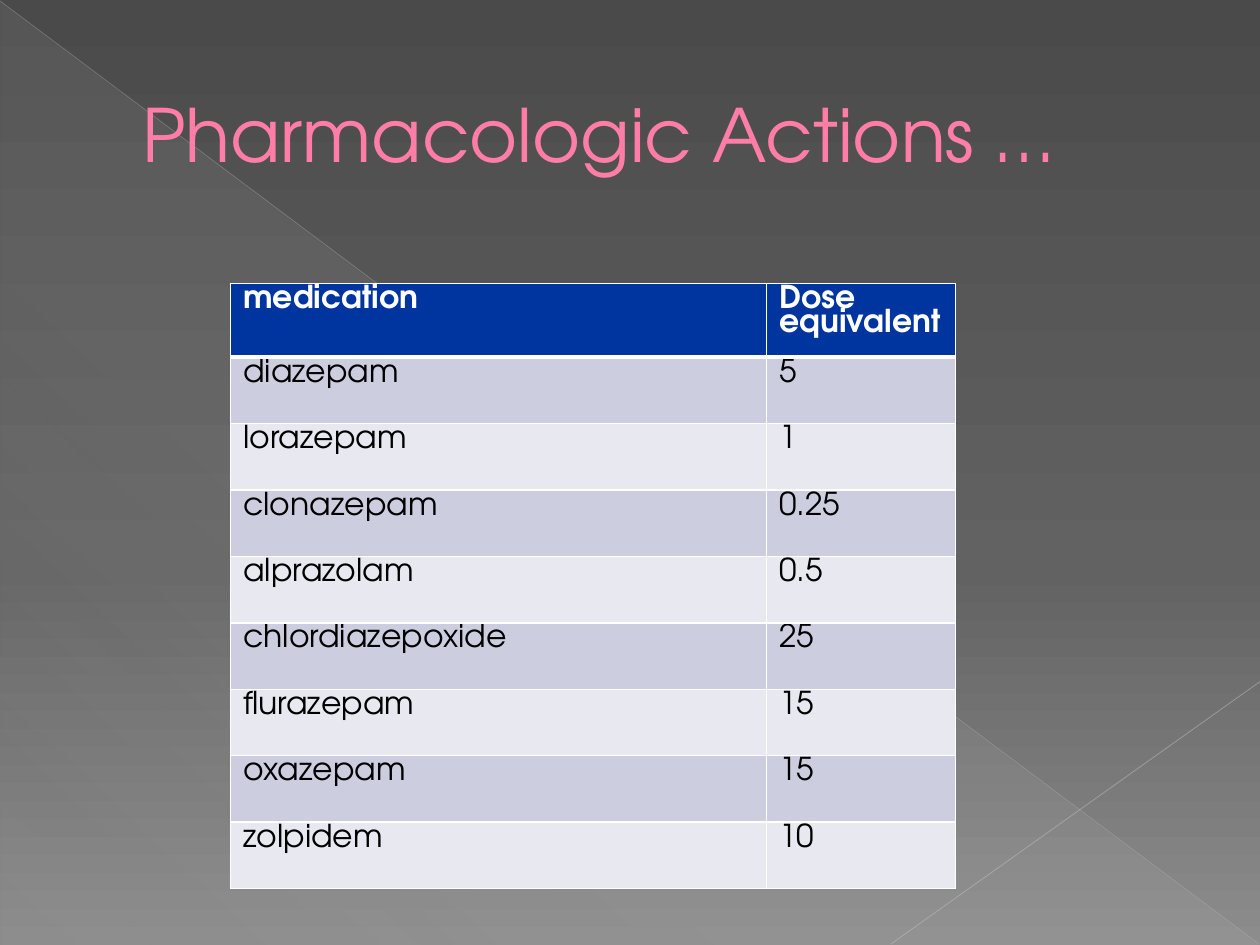
from lxml import etree
from pptx import Presentation
from pptx.dml.color import RGBColor
from pptx.enum.shapes import MSO_CONNECTOR, MSO_SHAPE
from pptx.enum.text import MSO_ANCHOR
from pptx.oxml.ns import qn
from pptx.util import Cm, Pt

LINE = MSO_CONNECTOR.STRAIGHT
WEDGE = MSO_SHAPE.RIGHT_TRIANGLE
MIDDLE = MSO_ANCHOR.MIDDLE
FONT = "TeX Gyre Adventor"
WIDTH, HEIGHT = 25.4, 19.05

DOSES = [
    ("medication", "Dose equivalent"),
    ("diazepam", "5"),
    ("lorazepam", "1"),
    ("clonazepam", "0.25"),
    ("alprazolam", "0.5"),
    ("chlordiazepoxide", "25"),
    ("flurazepam", "15"),
    ("oxazepam", "15"),
    ("zolpidem", "10"),
]


def color(code):
    return RGBColor.from_string(code)


def add(node, tag, **attrs):
    return etree.SubElement(node, qn(tag), {k: str(v) for k, v in attrs.items()})


def paint(node, code, alpha=100):
    """Add a colour, with its opacity in percent."""
    tone = add(node, "a:srgbClr", val=code)
    if alpha < 100:
        add(tone, "a:alpha", val=alpha * 1000)


def blend(host, stops, angle):
    """Put a gradient in place of the solid fill of host."""
    old = host.find(qn("a:solidFill"))
    grad = etree.Element(qn("a:gradFill"), rotWithShape="1")
    steps = add(grad, "a:gsLst")
    for pos, *tone in stops:
        paint(add(steps, "a:gs", pos=pos * 1000), *tone)
    add(grad, "a:lin", ang=angle * 60000, scaled=0)
    host.replace(old, grad)


def style(run, size, code, bold=False):
    run.font.name = FONT
    run.font.size = Pt(size)
    run.font.bold = bold
    run.font.color.rgb = color(code)


def add_ray(slide, start, end, code, width, alpha):
    ray = slide.shapes.add_connector(LINE, *map(Cm, start + end))
    ray.line.width = Pt(width)
    ray.line.color.rgb = color(code)
    props = ray.element.spPr
    tone = props.find(".//" + qn("a:srgbClr"))
    add(tone, "a:alpha", val=alpha * 1000)
    add(props, "a:effectLst")


def add_backdrop(slide, left, top, width, height):
    # Dark ground
    slide.background.fill.solid()
    ground = slide.element.find(".//" + qn("p:bgPr"))
    blend(ground, [(0, "4A4A4A"), (60, "626262"), (100, "8C8C8C")], 90)

    # Pale corner
    wedge = slide.shapes.add_shape(
        WEDGE, Cm(left + 0.02), Cm(top + 0.04), Cm(width - 0.04), Cm(height - 0.05))
    wedge.shadow.inherit = False
    wedge.line.fill.background()
    wedge.fill.solid()
    blend(wedge.element.spPr,
          [(0, "D2D2D2", 10), (70, "D2D2D2", 8), (100, "D2D2D2", 1)], 133)

    # Crossing rays
    right, base = left + width, top + height - 0.02
    add_ray(slide, (left, top + 0.02), (right - 0.02, base), "BFBFBF", 0.39, 35)
    add_ray(slide, (right, top + 13.74), (left + 17.96, base), "C6C6C6", 0.47, 45)


def add_title(slide, left, top, width, height):
    box = slide.shapes.add_textbox(Cm(left), Cm(top), Cm(width), Cm(height))
    frame = box.text_frame
    frame.word_wrap = True
    frame.vertical_anchor = MIDDLE
    frame.text = "Pharmacologic Actions …"
    para = frame.paragraphs[0]
    para._p.get_or_add_pPr().set("marL", str(Cm(1.35)))
    run = para.runs[0]
    style(run, 42, "FF7DA7")
    # Letter outline
    edge = etree.Element(qn("a:ln"), w=str(Pt(0.5)))
    paint(add(edge, "a:solidFill"), "B12761")
    run.font._element.insert(0, edge)


def add_borders(cell, base):
    props = cell._tc.get_or_add_tcPr()
    for side, width in (("L", 1), ("R", 1), ("T", 1), ("B", base)):
        edge = add(props, "a:ln" + side, w=Pt(width))
        paint(add(edge, "a:solidFill"), "FFFFFF")


def add_doses(slide, left, top, cols, row):
    grid = slide.shapes.add_table(
        len(DOSES), len(cols), Cm(left), Cm(top),
        Cm(sum(cols)), Cm(row * len(DOSES))).table
    for col, width in zip(grid.columns, cols):
        col.width = Cm(width)
    for r, texts in enumerate(DOSES):
        head = r == 0
        grid.rows[r].height = Cm(row)
        fill = "00349E" if head else ("E7E8F0", "CCCEDF")[r % 2]
        for c, text in enumerate(texts):
            cell = grid.cell(r, c)
            add_borders(cell, 3 if head else 1)
            cell.fill.solid()
            cell.fill.fore_color.rgb = color(fill)
            cell.text_frame.text = text
            para = cell.text_frame.paragraphs[0]
            para.line_spacing = 0.8
            style(para.runs[0], 18, "FFFFFF" if head else "000000", head)


def main():
    deck = Presentation()
    deck.slide_width, deck.slide_height = Cm(WIDTH), Cm(HEIGHT)
    slide = deck.slides.add_slide(deck.slide_layouts[6])
    add_backdrop(slide, 0, 0, WIDTH, HEIGHT)
    add_title(slide, 1.27, 0.74, 22.86, 3.89)
    add_doses(slide, 4.65, 5.72, (10.8, 3.81), 1.34)
    deck.save("out.pptx")


if __name__ == "__main__":
    main()
